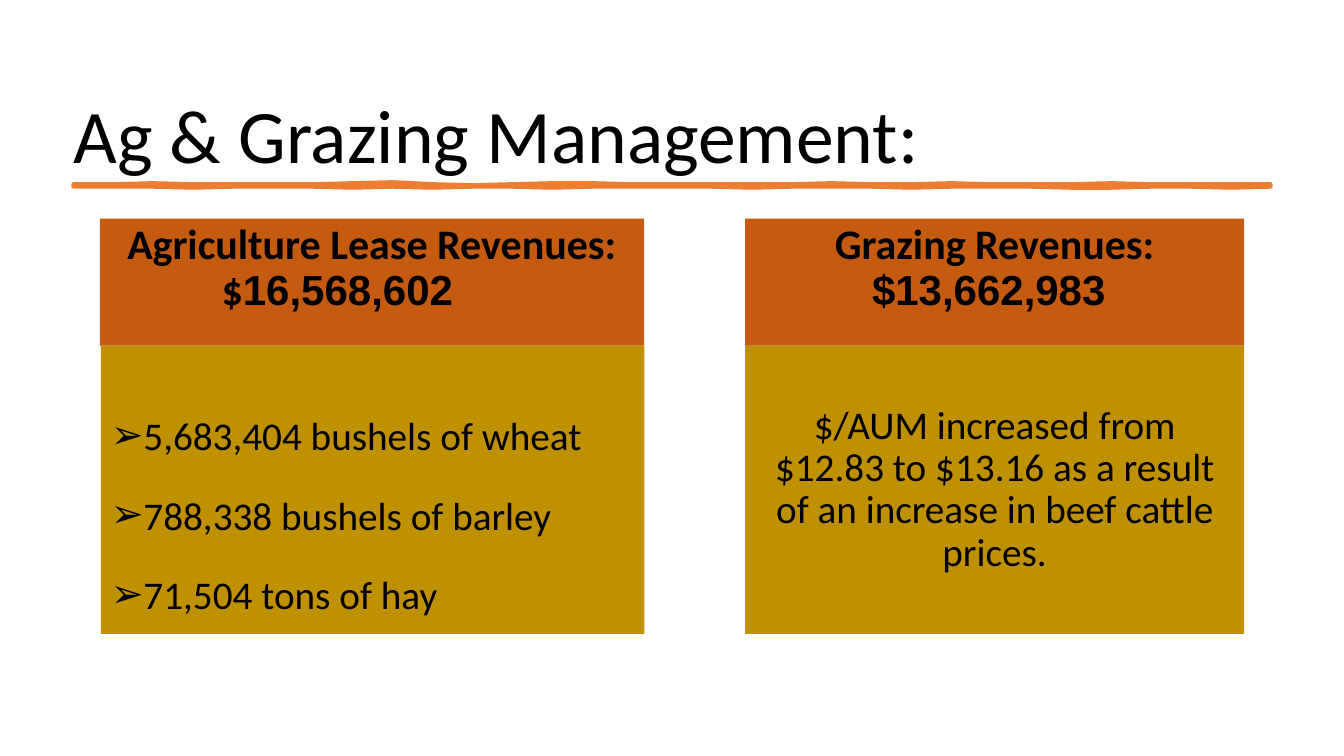
from pptx import Presentation
from pptx.dml.color import RGBColor
from pptx.enum.shapes import MSO_SHAPE as Shape
from pptx.enum.text import MSO_ANCHOR as Anchor, PP_ALIGN as Align
from pptx.oxml.ns import qn
from pptx.util import Inches, Pt
from lxml.etree import SubElement

BLACK, RUST, GOLD, ORANGE = "000000", "C55A11", "BF9000", "ED7D31"


def color(code):
    return RGBColor.from_string(code)


def write(frame, lines, size, bold=False, align=Align.CENTER, space=0.9,
          before=0, bullet=None, anchor=Anchor.TOP):
    """Each line is a list of (text, font) runs."""
    frame.word_wrap = True
    frame.vertical_anchor = anchor
    for i, runs in enumerate(lines):
        para = frame.paragraphs[0] if i == 0 else frame.add_paragraph()
        para.alignment = align
        para.line_spacing = space
        para.space_before = Pt(before if i else 0)
        if bullet:
            props = para._p.get_or_add_pPr()
            props.set("marL", str(Inches(0.25)))
            props.set("indent", str(Inches(-0.25)))
            SubElement(props, qn("a:buFont")).set("typeface", "Arial")
            SubElement(props, qn("a:buChar")).set("char", bullet)
        for text, face in runs:
            run = para.add_run()
            run.text = text
            run.font.name = face
            run.font.size = Pt(size)
            run.font.bold = bold
            run.font.color.rgb = color(BLACK)


def panel(slide, left, top, width, height, fill):
    box = slide.shapes.add_shape(Shape.RECTANGLE, Inches(left), Inches(top),
                                 Inches(width), Inches(height))
    box.shadow.inherit = False
    box.fill.solid()
    box.fill.fore_color.rgb = color(fill)
    box.line.fill.background()
    return box.text_frame


def title(slide, left, top, width, height, text):
    box = slide.shapes.add_textbox(Inches(left), Inches(top),
                                   Inches(width), Inches(height))
    write(box.text_frame, [[(text, "Calibri")]], 54, align=Align.LEFT,
          anchor=Anchor.BOTTOM)


def stroke(slide, left, top, width):
    """Hand-drawn rule: wavy upper and lower edges, offsets in 1/100 inch."""
    upper = [0, 0, -1, 0, 0, 0, 0, -1, -2, 0, 1, 0, -1, -1, 0, 0, 0, 0,
             0, -1, 0, 0, -1, 0, 0, 0, -1, 0, 0, 0, 0]
    lower = [2, 2, 2, 3, 2, 2, 2, 3, 2, 3, 2, 2, 3, 2, 2, 2, 2, 3,
             2, 2, 2, 3, 2, 2, 2, 3, 3, 2, 2, 3, 2]
    step = width / (len(upper) - 1)
    edges = [[(Inches(left + i * step), Inches(top + dy / 100))
              for i, dy in enumerate(edge)] for edge in (upper, lower)]
    dots = edges[0] + edges[1][::-1]
    pen = slide.shapes.build_freeform(*dots[0], scale=1.0)
    pen.add_line_segments(dots[1:], close=True)
    rule = pen.convert_to_shape()
    rule.shadow.inherit = False
    rule.fill.solid()
    rule.fill.fore_color.rgb = color(ORANGE)
    rule.line.color.rgb = color(ORANGE)
    rule.line.width = Pt(3.25)


def farming(slide, left, top, width, head, body):
    # Body first, so the header lies over its edge
    frame = panel(slide, left + 0.01, top + head, width - 0.01, body, GOLD)
    frame.margin_bottom = Inches(0.16)
    crops = ["5,683,404 bushels of wheat", "788,338 bushels of barley",
             "71,504 tons of hay"]
    write(frame, [[(crop, "Calibri")] for crop in crops], 28,
          align=Align.LEFT, space=1.4, before=10, bullet="➢",
          anchor=Anchor.BOTTOM)
    # Header, with the amount set left of centre
    frame = panel(slide, left, top, width, head, RUST)
    write(frame, [[("Agriculture Lease Revenues:", "Calibri")],
                  [("$", "Calibri"), ("16,568,602", "Arial")]], 30, bold=True)
    amount = frame.paragraphs[1]
    amount.alignment = Align.LEFT
    amount._p.get_or_add_pPr().set("marL", str(Inches(1.11)))


def grazing(slide, left, top, width, head, body):
    frame = panel(slide, left, top + head, width, body, GOLD)
    write(frame, [[("$/AUM increased from $12.83 to $13.16 as a result of an "
                    "increase in beef cattle prices.", "Calibri")]], 28,
          anchor=Anchor.MIDDLE)
    frame = panel(slide, left, top, width, head, RUST)
    write(frame, [[("Grazing Revenues:", "Calibri")],
                  [("$13,662,983 ", "Arial")]], 30, bold=True)


def main():
    deck = Presentation()
    deck.slide_width, deck.slide_height = Inches(13.33), Inches(7.5)
    slide = deck.slides.add_slide(deck.slide_layouts[6])
    stroke(slide, 0.73, 1.83, 11.87)
    farming(slide, 0.99, 2.17, 5.4, 1.26, 2.86)
    grazing(slide, 7.39, 2.17, 4.95, 1.26, 2.86)
    title(slide, 0.63, 0.26, 12.05, 1.57, "Ag & Grazing Management:")
    deck.save("out.pptx")


if __name__ == "__main__":
    main()
